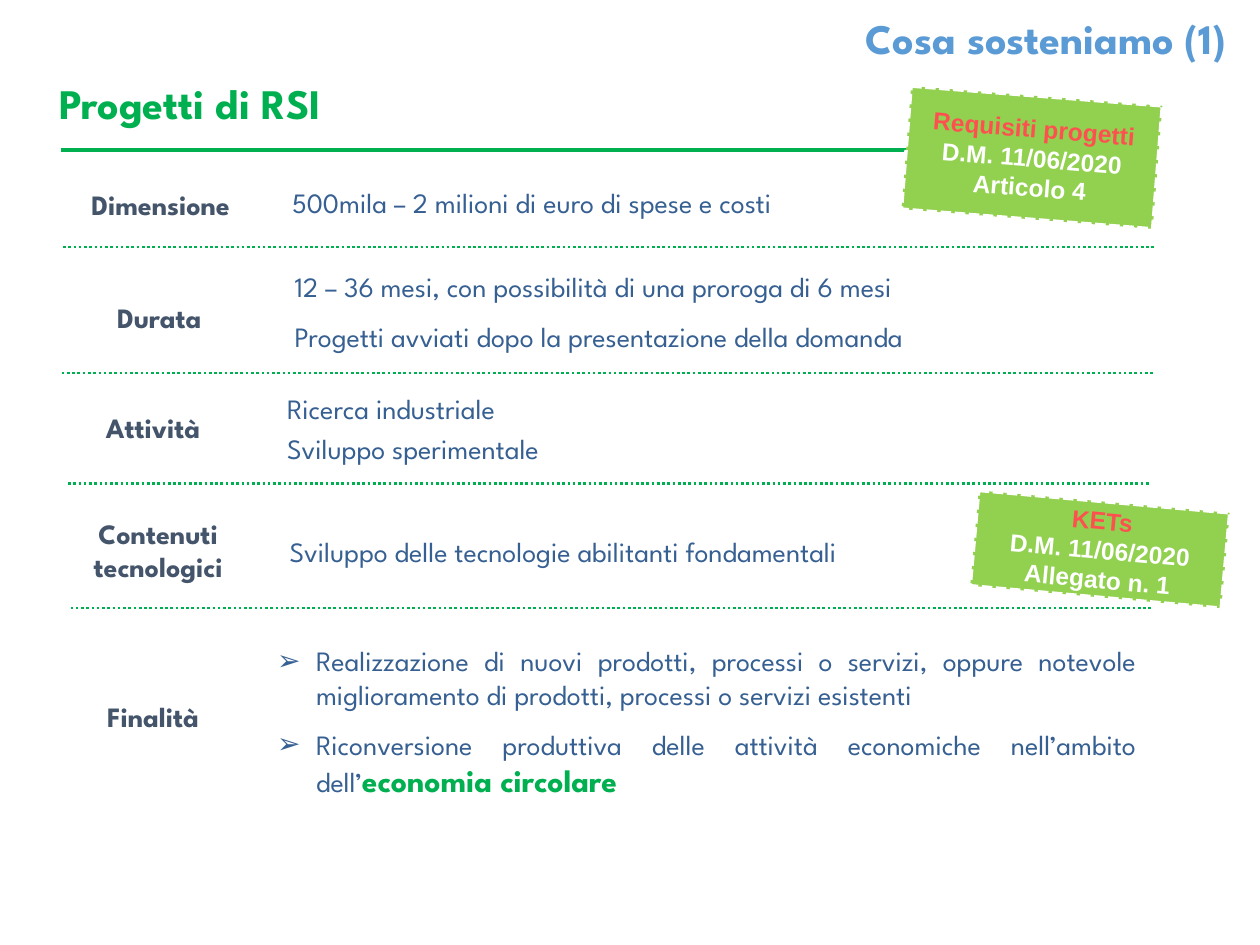
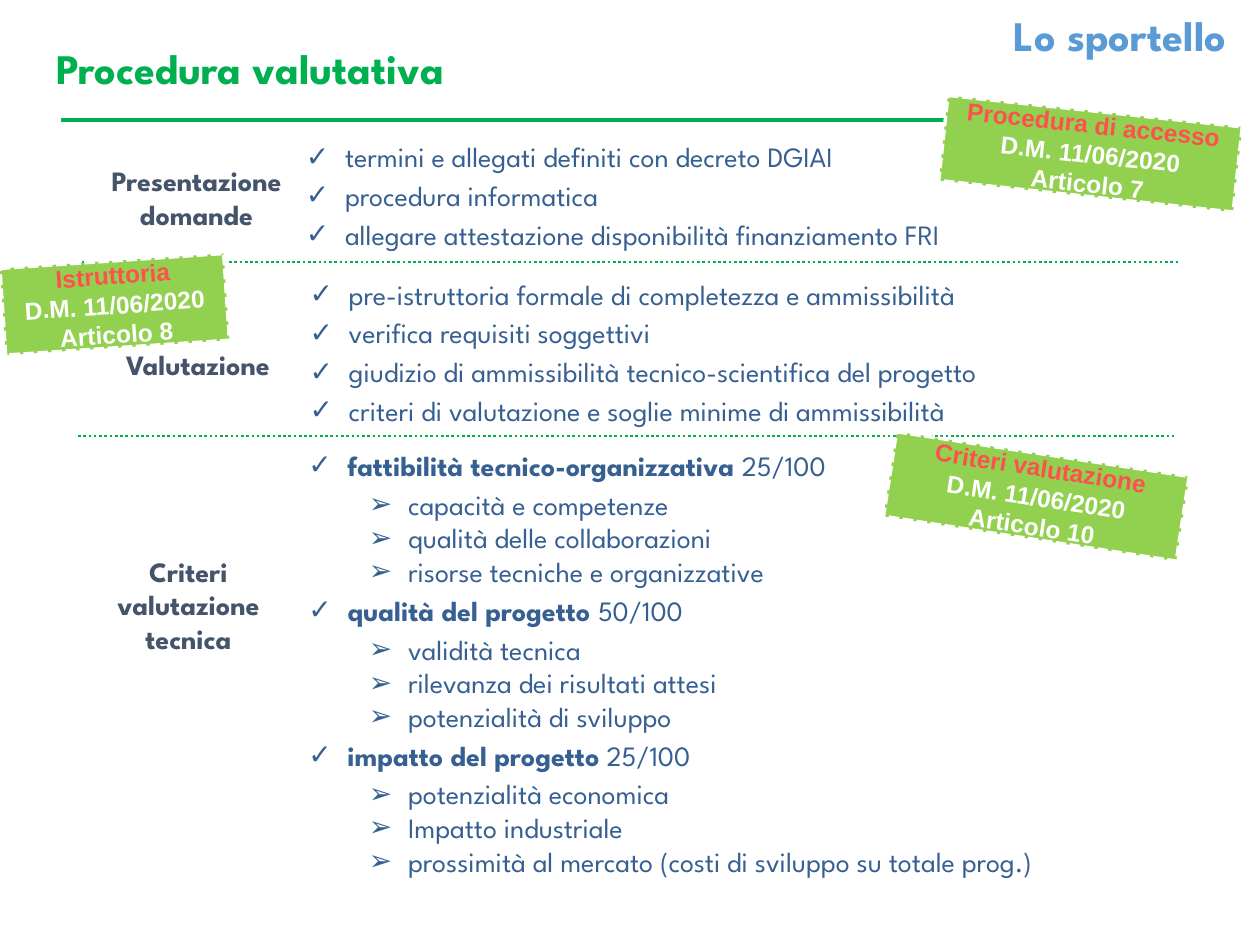
from lxml import etree
from pptx import Presentation
from pptx.dml.color import RGBColor
from pptx.enum.dml import MSO_LINE
from pptx.enum.shapes import MSO_CONNECTOR, MSO_SHAPE
from pptx.enum.text import MSO_ANCHOR, MSO_AUTO_SIZE, PP_ALIGN
from pptx.oxml.ns import qn
from pptx.util import Inches, Pt

LEFT, CENTER, RIGHT, JUSTIFY = PP_ALIGN.LEFT, PP_ALIGN.CENTER, PP_ALIGN.RIGHT, PP_ALIGN.JUSTIFY
MIDDLE, GROW = MSO_ANCHOR.MIDDLE, MSO_AUTO_SIZE.SHAPE_TO_FIT_TEXT
ARROW, RECT, ROUNDED = MSO_SHAPE.RIGHT_ARROW, MSO_SHAPE.RECTANGLE, MSO_SHAPE.ROUNDED_RECTANGLE
DOTS, DASHES, STRAIGHT = MSO_LINE.ROUND_DOT, MSO_LINE.SQUARE_DOT, MSO_CONNECTOR.STRAIGHT

C = {"green": "00B050", "blue": "5B9BD5", "body": "376092", "label": "44546A",
     "badge": "92D050", "red": "FF5050", "white": "FFFFFF"}
FONT = "League Spartan"

prs = Presentation()
prs.slide_width, prs.slide_height = Inches(10), Inches(7.5)
COL, ROW = prs.slide_width / 100, prs.slide_height / 75


def grid(*at):
    return [int(v * (ROW if i % 2 else COL)) for i, v in enumerate(at)]


def add_text(tf, text, size=16, color="body", font=FONT, bold=False, align=JUSTIFY,
             before=0, after=0, bullet=None, level=0):
    tf.word_wrap = True
    first = not tf.paragraphs[0].runs
    p = tf.paragraphs[0] if first else tf.add_paragraph()
    p.alignment, p.level = align, level
    p.space_before, p.space_after = Pt(0 if first else before), Pt(after)
    if bullet:
        pPr = p._p.get_or_add_pPr()
        pPr.set("marL", str(Inches(0.79 if level else 0.31)))
        pPr.set("indent", str(-Inches(0.31)))
        etree.SubElement(pPr, qn("a:buFont")).set("typeface", "Arial")
        etree.SubElement(pPr, qn("a:buChar")).set("char", bullet)
    for part, own in [(text, {})] if isinstance(text, str) else text:
        r = p.add_run()
        r.text = part
        r.font.name = font
        r.font.size = Pt(own.get("size", size))
        r.font.bold = own.get("bold", bold)
        r.font.color.rgb = RGBColor.from_string(C[own.get("color", color)])


CHECK = {"bullet": "✓", "after": 3}
SUB = {"bullet": "➢", "level": 1}
SUB_LAST = {**SUB, "after": 3}
SPACED = {"before": 3.5, "after": 6}
POINT = {**SPACED, "bullet": "➢"}
BOLD = {"bold": True}

SLIDES = [
    {
        "title": ("Cosa sosteniamo (1)", 0.5),
        "heading": ("Progetti di RSI", 3.7, 5.7),
        "bar": 11.6,
        "rules": [(5, 91.7, 19.6), (4.9, 91.5, 29.6), (5.4, 91.3, 38.4), (5.6, 91.5, 48.25)],
        "rows": [
            ("Dimensione", (5.2, 13.1, 15.1, 6.3), (22.2, 14.2, 69.2, 3.7), [
                ("500mila – 2 milioni di euro di spese e costi", SPACED)]),
            ("Durata", (5.1, 22, 15.1, 6.3), (22.4, 20.9, 69.2, 7.8), [
                ("12 – 36 mesi, con possibilità di una proroga di 6 mesi", SPACED),
                ("Progetti avviati dopo la presentazione della domanda", SPACED)]),
            ("Attività", (4.6, 29.6, 15.1, 8.7), (21.8, 30.6, 68.8, 6.9), [
                ("Ricerca industriale", {}),
                ("Sviluppo sperimentale", {"before": 3.5})]),
            ("Contenuti tecnologici", (5, 40.5, 15.1, 6.3), (22, 41.9, 50.4, 3.8), [
                ("Sviluppo delle tecnologie abilitanti fondamentali", SPACED)]),
            ("Finalità", (4.6, 53.7, 15.1, 6.3), (21, 50.6, 70.2, 13.5), [
                ("Realizzazione di nuovi prodotti, processi o servizi, oppure notevole "
                 "miglioramento di prodotti, processi o servizi esistenti", POINT),
                ([("Riconversione produttiva delle attività economiche nell’ambito dell’", {}),
                  ("economia circolare", {"size": 18, "color": "green", "bold": True})], POINT)]),
        ],
        "badges": [("Requisiti progetti", "Articolo 4", (71.9, 7.6, 20, 9.8), 4.5),
                   ("KETs", "Allegato n. 1", (77.3, 39.8, 20, 7.6), 5.1)],
    },
    {
        "title": ("Lo sportello", 0.3),
        "heading": ("Procedura valutativa", 3.5, 2.9),
        "bar": 9.2,
        "rules": [(6.5, 93.7, 20.8), (6.2, 93.3, 34.6)],
        "rows": [
            ("Presentazione domande", (6.4, 10.7, 18.4, 9.9), (23.3, 10.6, 63.2, 9.9), [
                ("termini e allegati definiti con decreto DGIAI", CHECK),
                ("procedura informatica", CHECK),
                ("allegare attestazione disponibilità finanziamento FRI", CHECK)]),
            ("Valutazione", (6.5, 25.2, 18.4, 7.5), (23.6, 21.5, 71.7, 13), [
                ("pre-istruttoria formale di completezza e ammissibilità", CHECK),
                ("verifica requisiti soggettivi", CHECK),
                ("giudizio di ammissibilità tecnico-scientifica del progetto", CHECK),
                ("criteri di valutazione e soglie minime di ammissibilità", CHECK)]),
            ("Criteri valutazione tecnica", (6.9, 37.6, 16.1, 20.8), (23.5, 35.1, 70, 38.1), [
                ([("fattibilità tecnico-organizzativa ", BOLD), ("25/100", {})], CHECK),
                ("capacità e competenze", SUB),
                ("qualità delle collaborazioni", SUB),
                ("risorse tecniche e organizzative", SUB_LAST),
                ([("qualità del progetto ", BOLD), ("50/100", {})], CHECK),
                ("validità tecnica", SUB),
                ("rilevanza dei risultati attesi", SUB),
                ("potenzialità di sviluppo", SUB_LAST),
                ([("impatto del progetto", BOLD), (" 25/100", {})], CHECK),
                ("potenzialità economica", SUB),
                ("Impatto industriale", SUB),
                ("prossimità al mercato (costi di sviluppo su totale prog.)", SUB)]),
        ],
        "badges": [("Procedura di accesso", "Articolo 7", (74.8, 8.8, 23.5, 6.8), 6.1),
                   ("Istruttoria", "Articolo 8", (0.2, 20.7, 17.8, 6.9), 356.2),
                   ("Criteri valutazione", "Articolo 10", (70.5, 36, 23.5, 6.8), 8.7)],
    },
]

for data in SLIDES:
    s = prs.slides.add_slide(prs.slide_layouts[6])

    title, top = data["title"]
    heading, left, heading_top = data["heading"]
    for text, at, color, align in [(title, (58.5, top, 39.8, 5), "blue", RIGHT),
                                   (heading, (left, heading_top, 81.1, 5), "green", LEFT)]:
        tf = s.shapes.add_textbox(*grid(*at)).text_frame
        tf.auto_size = GROW
        add_text(tf, text, size=24, color=color, bold=True, align=align)

    bar = s.shapes.add_shape(RECT, *grid(4.7, data["bar"], 87, 0.6))
    bar.shadow.inherit = False
    bar.fill.solid()
    bar.fill.fore_color.rgb = RGBColor.from_string(C["green"])
    bar.line.color.rgb = RGBColor.from_string(C["white"])
    bar.line.width = Pt(2)

    for x1, x2, y in data["rules"]:
        rule = s.shapes.add_connector(STRAIGHT, *grid(x1, y, x2, y))
        rule.line.color.rgb = RGBColor.from_string(C["green"])
        rule.line.width = Pt(1.5)
        rule.line.dash_style = DOTS
        etree.SubElement(rule._element.spPr, qn("a:effectLst"))

    for label, label_at, body_at, paragraphs in data["rows"]:
        sp = s.shapes.add_shape(ARROW, *grid(*label_at))
        sp.adjustments[0], sp.adjustments[1] = 1, 0
        sp.shadow.inherit = False
        sp.fill.background()
        sp.line.fill.background()
        sp.text_frame.vertical_anchor = MIDDLE
        add_text(sp.text_frame, label, color="label", bold=True, align=CENTER)

        tf = s.shapes.add_textbox(*grid(*body_at)).text_frame
        tf.auto_size = GROW
        for text, fmt in paragraphs:
            add_text(tf, text, **fmt)

    for topic, article, at, angle in data["badges"]:
        sp = s.shapes.add_shape(ROUNDED, *grid(*at))
        sp.adjustments[0] = 0
        sp.rotation = angle
        sp.shadow.inherit = False
        sp.fill.solid()
        sp.fill.fore_color.rgb = RGBColor.from_string(C["badge"])
        sp.line.color.rgb = RGBColor.from_string(C["white"])
        sp.line.width = Pt(2)
        sp.line.dash_style = DASHES
        sp.text_frame.vertical_anchor = MIDDLE
        for text, color in [(topic, "red"), ("D.M. 11/06/2020", "white"), (article, "white")]:
            add_text(sp.text_frame, text, size=14, color=color, font="Arial", bold=True, align=CENTER)

prs.save("out.pptx")
